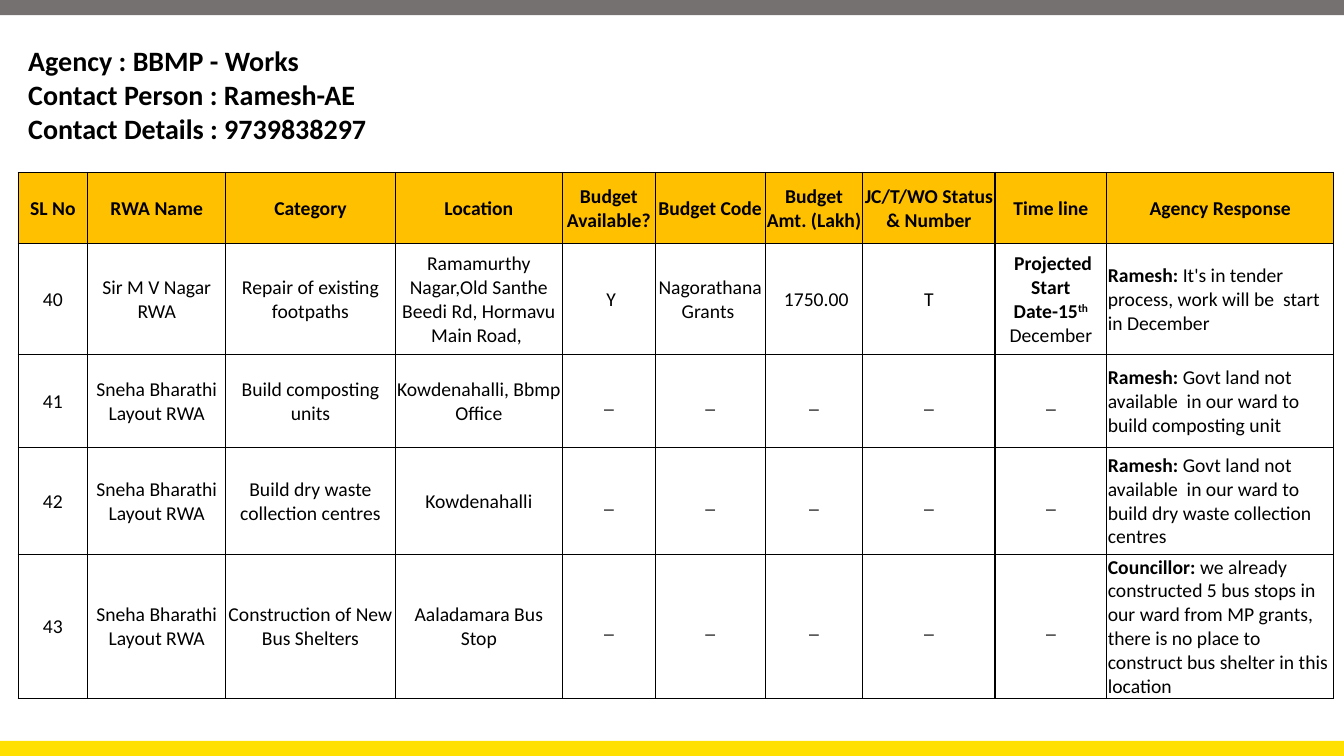
from lxml import etree
from pptx import Presentation
from pptx.dml.color import RGBColor
from pptx.enum.shapes import MSO_SHAPE
from pptx.enum.text import MSO_ANCHOR, PP_ALIGN
from pptx.oxml.ns import qn
from pptx.util import Inches, Pt

RECT = MSO_SHAPE.RECTANGLE
MIDDLE = MSO_ANCHOR.MIDDLE
LEFT, CENTER = PP_ALIGN.LEFT, PP_ALIGN.CENTER
BLACK = RGBColor(0x00, 0x00, 0x00)
GRAY = RGBColor(0x76, 0x71, 0x71)
YELLOW = RGBColor(0xFF, 0xE0, 0x00)
AMBER = RGBColor(0xFF, 0xC0, 0x00)
FONT = "Calibri"

TITLE = [
    "Agency : BBMP - Works",
    "Contact Person : Ramesh-AE",
    "Contact Details : 9739838297",
]
HEAD = [
    "SL No", "RWA Name", "Category", "Location", "Budget Available?",
    "Budget Code", "Budget Amt. (Lakh)", "JC/T/WO Status & Number",
    "Time line", "Agency Response",
]
# A cell is plain text or a list of (text, style) runs.
START = [(" ", ""), ("Projected Start Date-15", "bold"),
         ("th ", "bold super"), ("December", "")]
BLANKS = ["_"] * 5
SNEHA = "Sneha Bharathi Layout RWA"


def reply(who, text):
    return [(who + ": ", "bold"), (text, "")]


ROWS = [
    ["40", "Sir M V Nagar RWA", "Repair of existing footpaths",
     "Ramamurthy Nagar,Old Santhe Beedi Rd, Hormavu Main Road, ",
     " Y", "Nagorathana Grants ", " 1750.00", "T", START,
     reply("Ramesh", "It's in tender process, work will be  start in December")],
    ["41", SNEHA, "Build composting units", "Kowdenahalli, Bbmp Office", *BLANKS,
     reply("Ramesh", "Govt land not available  in our ward to build composting unit")],
    ["42", SNEHA, "Build dry waste collection centres", "Kowdenahalli", *BLANKS,
     reply("Ramesh", "Govt land not available  in our ward to build dry waste "
           "collection centres")],
    ["43", SNEHA, "Construction of New Bus Shelters", "Aaladamara Bus Stop", *BLANKS,
     reply("Councillor", "we already constructed 5 bus stops in our ward from MP "
           "grants, there is no place to construct bus shelter in this location")],
]
WIDTHS = [0.69, 1.37, 1.68, 1.66, 0.92, 1.09, 0.97, 1.31, 1.11, 2.25]
HEIGHTS = [0.71, 1.1, 0.92, 1.06, 1.2]
WIDE, HIGH, BAND = 13.33, 7.5, 0.15


def add_band(slide, top, color):
    band = slide.shapes.add_shape(RECT, 0, Inches(top), Inches(WIDE), Inches(BAND))
    band.shadow.inherit = False
    band.fill.solid()
    band.fill.fore_color.rgb = color
    band.line.fill.background()


def style(font, size, bold):
    font.name, font.size, font.bold = FONT, Pt(size), bold
    font.color.rgb = BLACK


def add_title(slide):
    title = slide.shapes.title
    title.left, title.top = Inches(0.18), Inches(0.38)
    title.width, title.height = Inches(12.95), Inches(1.11)
    frame = title.text_frame
    frame.text = "\n".join(TITLE)
    frame.vertical_anchor = MIDDLE
    for para in frame.paragraphs:
        para.alignment = LEFT
        style(para.font, 20, True)


def add_edges(cell):
    props = cell._tc.get_or_add_tcPr()
    for side in ("lnL", "lnR", "lnT", "lnB"):
        line = etree.SubElement(props, qn("a:" + side), w=str(Pt(1)))
        fill = etree.SubElement(line, qn("a:solidFill"))
        etree.SubElement(fill, qn("a:srgbClr"), val=str(BLACK))


def fill_cell(cell, text, head, align):
    cell.margin_left = cell.margin_right = cell.margin_top = Inches(0.01)
    cell.margin_bottom = 0
    cell.vertical_anchor = MIDDLE
    add_edges(cell)
    if head:
        cell.fill.solid()
        cell.fill.fore_color.rgb = AMBER
    else:
        cell.fill.background()
    para = cell.text_frame.paragraphs[0]
    para.alignment = align
    style(para.font, 14, head)
    for words, look in [(text, "")] if isinstance(text, str) else text:
        run = para.add_run()
        run.text = words
        style(run.font, 14, head or "bold" in look)
        if "super" in look:
            run._r.get_or_add_rPr().set("baseline", "30000")


def add_grid(slide):
    grid = slide.shapes.add_table(
        len(HEIGHTS), len(WIDTHS), Inches(0.18), Inches(1.71),
        Inches(sum(WIDTHS)), Inches(sum(HEIGHTS))).table
    grid.horz_banding = False
    for col, width in zip(grid.columns, WIDTHS):
        col.width = Inches(width)
    for row, height in zip(grid.rows, HEIGHTS):
        row.height = Inches(height)
    last = len(WIDTHS) - 1
    for r, texts in enumerate([HEAD] + ROWS):
        for c, text in enumerate(texts):
            align = LEFT if r and c == last else CENTER
            fill_cell(grid.cell(r, c), text, r == 0, align)


def main():
    deck = Presentation()
    deck.slide_width, deck.slide_height = Inches(WIDE), Inches(HIGH)
    slide = deck.slides.add_slide(deck.slide_layouts[5])
    add_band(slide, HIGH - BAND, YELLOW)
    add_band(slide, 0, GRAY)
    add_grid(slide)
    add_title(slide)
    deck.save("out.pptx")


if __name__ == "__main__":
    main()
